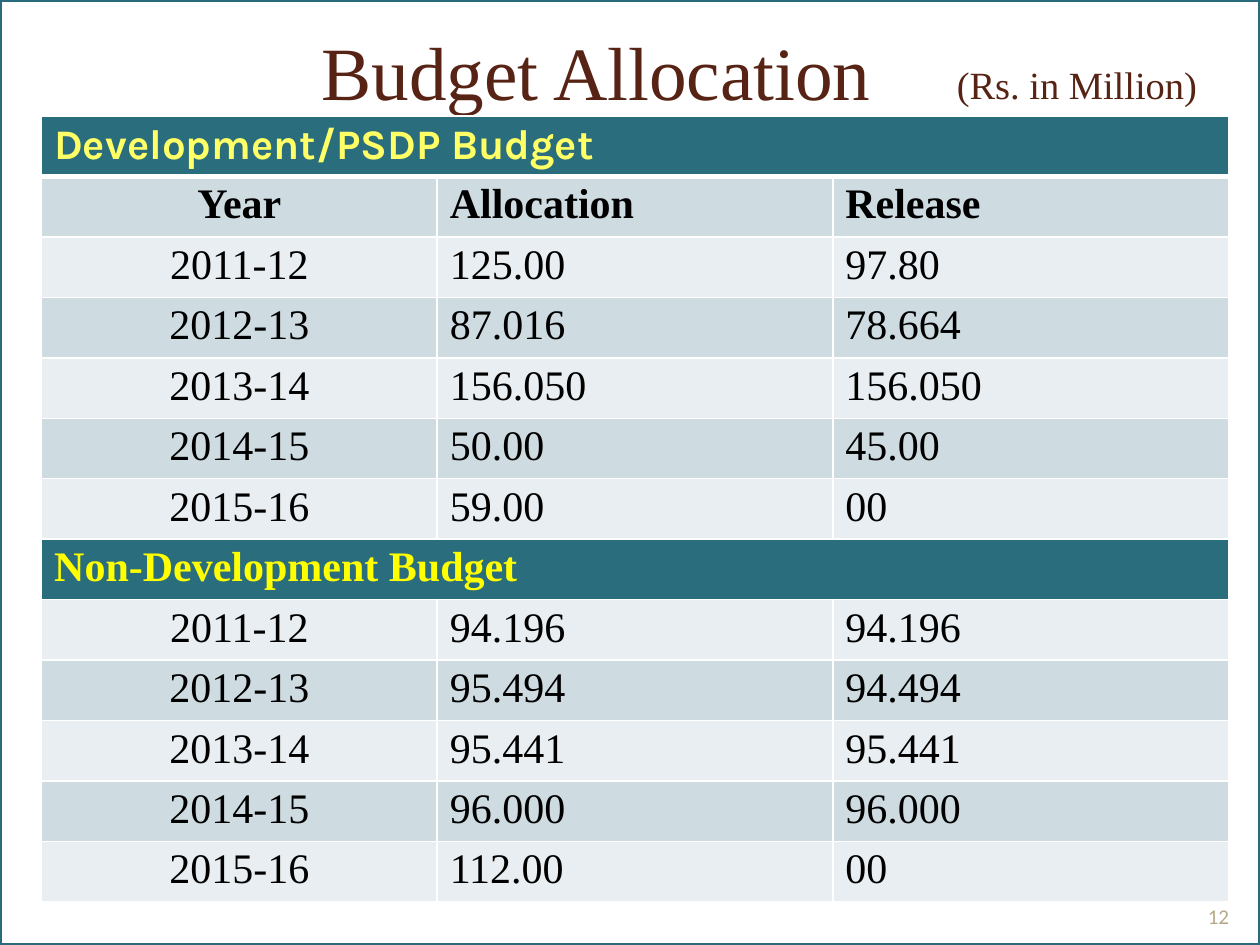
from dataclasses import dataclass

from lxml.etree import SubElement
from pptx import Presentation
from pptx.dml.color import RGBColor
from pptx.enum.shapes import MSO_SHAPE
from pptx.enum.text import MSO_ANCHOR, PP_ALIGN
from pptx.oxml.ns import qn
from pptx.util import Inches, Pt


@dataclass(frozen=True)
class Theme:
    paper: str = "FFFFFF"
    frame: str = "296B7C"
    section: str = "2A6D7D"
    bands: tuple = ("E8EEF1", "CEDCE1")
    title: str = "572314"
    number: str = "B6A98A"
    body: str = "000000"
    development: str = "FFFF66"
    non_development: str = "FFFF00"
    serif: str = "Times New Roman"
    display: str = "Karla"
    sans: str = "Calibri"
    title_size: int = 43
    unit_size: int = 22
    table_size: int = 24
    number_size: int = 12


class BudgetSlide:
    def __init__(self, slide, theme):
        self.slide = slide
        self.theme = theme

    def add_text(self, frame, text, align, color, size, name, bold=False):
        paragraph = frame.paragraphs[0]
        paragraph.alignment = align
        run = paragraph.add_run()
        run.text = text
        formats = {"name": name, "size": Pt(size), "bold": bold}
        for attribute, value in formats.items():
            setattr(run.font, attribute, value)
        run.font.color.rgb = RGBColor.from_string(color)

    def border(self, width, height):
        border = self.slide.shapes.add_shape(MSO_SHAPE.RECTANGLE, 0, 0, width, height)
        border.shadow.inherit = False
        border.fill.solid()
        border.fill.fore_color.rgb = RGBColor.from_string(self.theme.paper)
        border.line.color.rgb = RGBColor.from_string(self.theme.frame)
        border.line.width = Pt(2)

    def label(self, box, text, align, color, size, name):
        frame = self.slide.shapes.add_textbox(*map(Inches, box)).text_frame
        formats = {
            "word_wrap": True,
            "vertical_anchor": MSO_ANCHOR.BOTTOM,
            "margin_left": 0,
            "margin_right": 0,
            "margin_top": 0,
            "margin_bottom": 0,
        }
        for attribute, value in formats.items():
            setattr(frame, attribute, value)
        self.add_text(frame, text, align, color, size, name)

    def edges(self, cell, top=1, bottom=1):
        properties = cell._tc.get_or_add_tcPr()
        for side, width in {"L": 1, "R": 1, "T": top, "B": bottom}.items():
            edge = SubElement(properties, qn(f"a:ln{side}"), w=str(Pt(width)))
            fill = SubElement(edge, qn("a:solidFill"))
            SubElement(fill, qn("a:srgbClr"), val=self.theme.paper)

    def table(self, left, top, column_width, row_height, rows, sections):
        theme = self.theme
        columns = max(map(len, rows))
        table = self.slide.shapes.add_table(
            len(rows), columns, Inches(left), Inches(top),
            Inches(column_width * columns), Inches(row_height * len(rows)),
        ).table
        table.first_row = table.horz_banding = False
        for column in table.columns:
            column.width = Inches(column_width)
        margins = {"margin_top": Inches(0.04), "margin_bottom": Inches(0.04)}
        for index, values in enumerate(rows):
            table.rows[index].height = Inches(row_height)
            is_section = len(values) == 1
            background = theme.section if is_section else theme.bands[index % 2]
            for position in range(columns):
                cell = table.cell(index, position)
                for attribute, value in margins.items():
                    setattr(cell, attribute, value)
                self.edges(cell, 3 if index == 1 else 1, 3 if index == 0 else 1)
                cell.fill.solid()
                cell.fill.fore_color.rgb = RGBColor.from_string(background)
            if is_section:
                table.cell(index, 0).merge(table.cell(index, columns - 1))
            for position, text in enumerate(values):
                color, name = sections.get(text, (theme.body, theme.serif))
                centred = position == 0 and not is_section
                self.add_text(
                    table.cell(index, position).text_frame, text,
                    PP_ALIGN.CENTER if centred else PP_ALIGN.LEFT,
                    color, theme.table_size, name, is_section or index == 1,
                )


def main():
    theme = Theme()
    presentation = Presentation()
    presentation.slide_width = Inches(10)
    presentation.slide_height = Inches(7.5)
    budget = BudgetSlide(
        presentation.slides.add_slide(presentation.slide_layouts[6]), theme
    )
    budget.border(presentation.slide_width, presentation.slide_height)
    budget.label((9.42, 6.9, 0.5, 0.47), "12", PP_ALIGN.CENTER,
                 theme.number, theme.number_size, theme.sans)
    budget.label((0.25, 0.08, 6.66, 0.84), "Budget Allocation", PP_ALIGN.RIGHT,
                 theme.title, theme.title_size, theme.serif)
    budget.label((7.2, 0.08, 2.3, 0.77), "(Rs. in Million)", PP_ALIGN.RIGHT,
                 theme.title, theme.unit_size, theme.serif)

    development = "Development/PSDP Budget"
    non_development = "Non-Development Budget"
    rows = [
        (development,),
        ("Year", "Allocation", "Release"),
        ("2011-12", "125.00", "97.80"),
        ("2012-13", "87.016", "78.664"),
        ("2013-14", "156.050", "156.050"),
        ("2014-15", "50.00", "45.00"),
        ("2015-16", "59.00", "00"),
        (non_development,),
        ("2011-12", "94.196", "94.196"),
        ("2012-13", "95.494", "94.494"),
        ("2013-14", "95.441", "95.441"),
        ("2014-15", "96.000", "96.000"),
        ("2015-16", "112.00", "00"),
    ]
    sections = {
        development: (theme.development, theme.display),
        non_development: (theme.non_development, theme.serif),
    }
    budget.table(0.33, 0.92, 3.14, 0.47, rows, sections)
    presentation.save("out.pptx")


if __name__ == "__main__":
    main()
